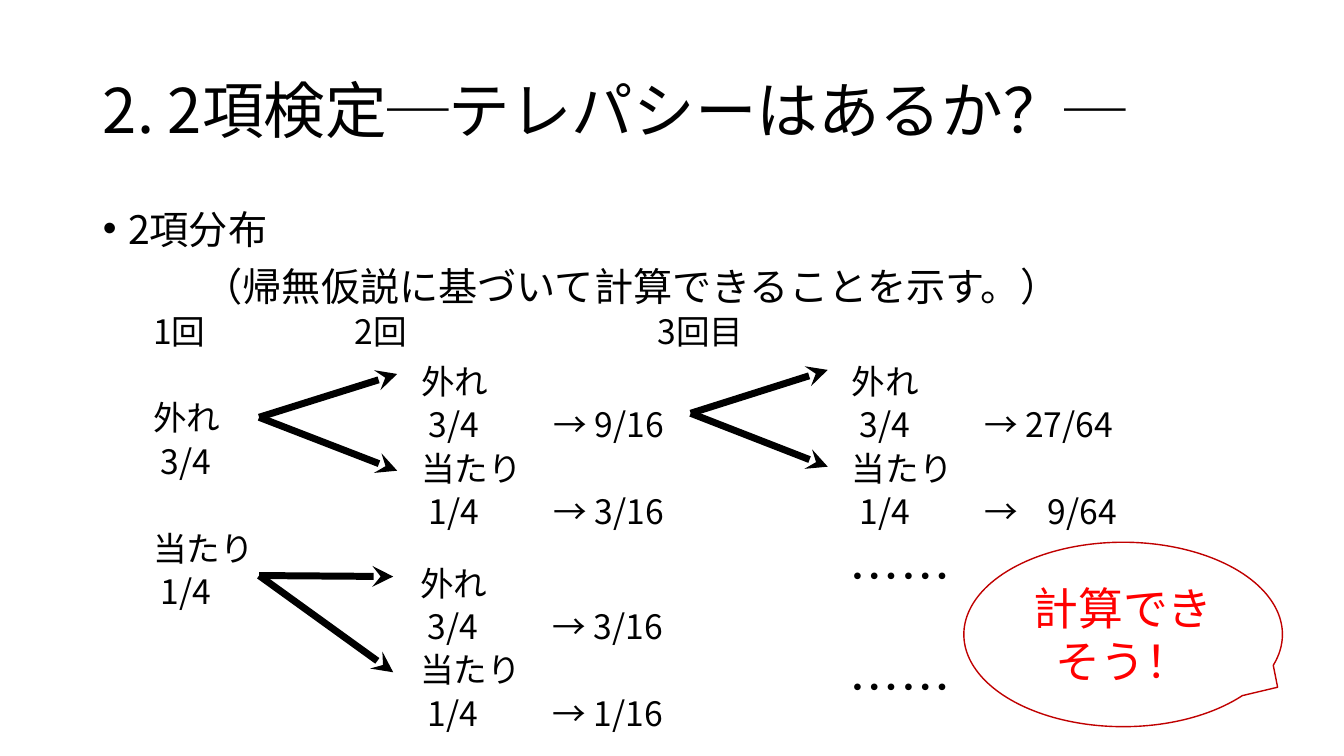
from dataclasses import dataclass

from lxml.etree import SubElement
from pptx import Presentation
from pptx.dml.color import RGBColor
from pptx.enum.shapes import MSO_CONNECTOR, MSO_SHAPE
from pptx.enum.text import MSO_ANCHOR, PP_ALIGN
from pptx.oxml.ns import qn
from pptx.slide import Slide
from pptx.text.text import TextFrame, _Paragraph
from pptx.util import Emu, Pt

PX = 9144  # 100 px to the inch
FONT = "Noto Sans CJK JP"
BLACK = RGBColor(0x00, 0x00, 0x00)
RED = RGBColor(0xFF, 0x00, 0x00)
DARK_RED = RGBColor(0xC0, 0x00, 0x00)

RESULT_TABS = (131, 194)
NO_MARGINS = {"margin_left": 0, "margin_top": 0, "margin_right": 0,
              "margin_bottom": 0, "word_wrap": True}


@dataclass(frozen=True)
class Line:
    text: str
    gap: int = 0  # points before the line
    indent: int = 0
    bullet: bool = False


@dataclass(frozen=True)
class Block:
    left: int
    top: int
    width: int
    lines: tuple[Line, ...]
    size: int = 24
    pitch: int = 31  # points from line to line


@dataclass(frozen=True)
class Fork:
    """Arrows from one outcome to the two that can follow it."""
    start: tuple[int, int]
    ends: tuple[tuple[int, int], ...]


def branch(left: int, top: int, miss: str, hit: str) -> Block:
    lines = ("外れ", f" 3/4\t→{miss}", "当たり", f" 1/4\t→{hit}")
    return Block(left, top, 330, tuple(Line(text) for text in lines))


BLOCKS = (
    Block(102, 193, 1170, (
        Line("2項分布", indent=25, bullet=True),
        Line("（帰無仮説に基づいて計算できることを示す。）", indent=100),
    ), size=28, pitch=41),
    *(Block(left, 305, 150, (Line(heading),))
      for left, heading in ((152, "1回"), (352, "2回"), (652, "3回目"))),
    Block(152, 391, 150, (
        Line("外れ"), Line(" 3/4"), Line("当たり", gap=31), Line(" 1/4"))),
    branch(418, 355, " 9/16", " 3/16"),
    branch(417, 555, " 3/16", " 1/16"),
    branch(845, 355, " 27/64", "\t9/64"),
    Block(843, 547, 150, (Line("……"), Line("……", gap=40)), size=36, pitch=39),
)

FORKS = (
    Fork((257, 414), ((394, 371), (394, 467))),
    Fork((257, 571), ((390, 572), (390, 667))),
    Fork((685, 410), ((821, 367), (821, 463))),
)


def px(*lengths: int) -> list[Emu]:
    return [Emu(length * PX) for length in lengths]


def apply(target: object, formats: dict[str, object]) -> None:
    for attribute, value in formats.items():
        setattr(target, attribute, value)


def write(paragraph: _Paragraph, text: str, size: int, color: RGBColor,
          formats: dict[str, object]) -> None:
    apply(paragraph, formats)
    run = paragraph.add_run()
    run.text = text
    apply(run.font, {"size": Pt(size), "name": FONT})
    run.font.color.rgb = color
    SubElement(run.font._element, qn("a:ea"), typeface=FONT)


def add_line(frame: TextFrame, position: int, line: Line, block: Block) -> None:
    paragraph = frame.paragraphs[0] if position == 0 else frame.add_paragraph()
    write(paragraph, line.text, block.size, BLACK,
          {"line_spacing": Pt(block.pitch), "space_before": Pt(line.gap)})
    properties = paragraph._p.get_or_add_pPr()
    properties.set("marL", str(line.indent * PX))
    if line.bullet:
        properties.set("indent", str(-line.indent * PX))
        SubElement(properties, qn("a:buFont"), typeface="Arial")
        SubElement(properties, qn("a:buChar"), char="•")
    if "\t" in line.text:
        stops = SubElement(properties, qn("a:tabLst"))
        for stop in RESULT_TABS:
            SubElement(stops, qn("a:tab"), pos=str(stop * PX), algn="l")


def add_block(slide: Slide, block: Block) -> None:
    height = sum(line.gap + block.pitch for line in block.lines) * 100 // 72
    frame = slide.shapes.add_textbox(
        *px(block.left, block.top, block.width, height)).text_frame
    apply(frame, NO_MARGINS)
    for position, line in enumerate(block.lines):
        add_line(frame, position, line, block)


def add_fork(slide: Slide, fork: Fork) -> None:
    for end in fork.ends:
        arrow = slide.shapes.add_connector(
            MSO_CONNECTOR.STRAIGHT, *px(*fork.start, *end))
        arrow.line.width = Pt(5)
        arrow.line.color.rgb = BLACK
        SubElement(arrow.line._get_or_add_ln(), qn("a:tailEnd"), type="stealth")
        SubElement(arrow._element.spPr, qn("a:effectLst"))


def add_title(slide: Slide) -> None:
    title = slide.shapes.title
    apply(title, dict(zip(("left", "top", "width", "height"),
                          px(92, 40, 1150, 145))))
    apply(title.text_frame, {"vertical_anchor": MSO_ANCHOR.MIDDLE,
                             "word_wrap": True})
    write(title.text_frame.paragraphs[0], "2. 2項検定─テレパシーはあるか？─",
          44, BLACK, {"alignment": PP_ALIGN.LEFT, "line_spacing": 0.9})


def add_callout(slide: Slide) -> None:
    callout = slide.shapes.add_shape(
        MSO_SHAPE.OVAL_CALLOUT, *px(956, 538, 316, 183))
    callout.adjustments[0] = 0.485
    callout.adjustments[1] = 0.286
    callout.shadow.inherit = False
    callout.fill.background()
    callout.line.color.rgb = DARK_RED
    callout.line.width = Pt(1)
    apply(callout.text_frame, {"vertical_anchor": MSO_ANCHOR.MIDDLE,
                               "word_wrap": True})
    write(callout.text_frame.paragraphs[0], "計算できそう！", 32, RED,
          {"alignment": PP_ALIGN.CENTER, "line_spacing": Pt(38)})


def main() -> None:
    presentation = Presentation()
    apply(presentation, dict(zip(("slide_width", "slide_height"), px(1333, 750))))
    slide = presentation.slides.add_slide(presentation.slide_layouts[5])
    add_title(slide)
    for block in BLOCKS:
        add_block(slide, block)
    for fork in FORKS:
        add_fork(slide, fork)
    add_callout(slide)
    presentation.save("out.pptx")


if __name__ == "__main__":
    main()
